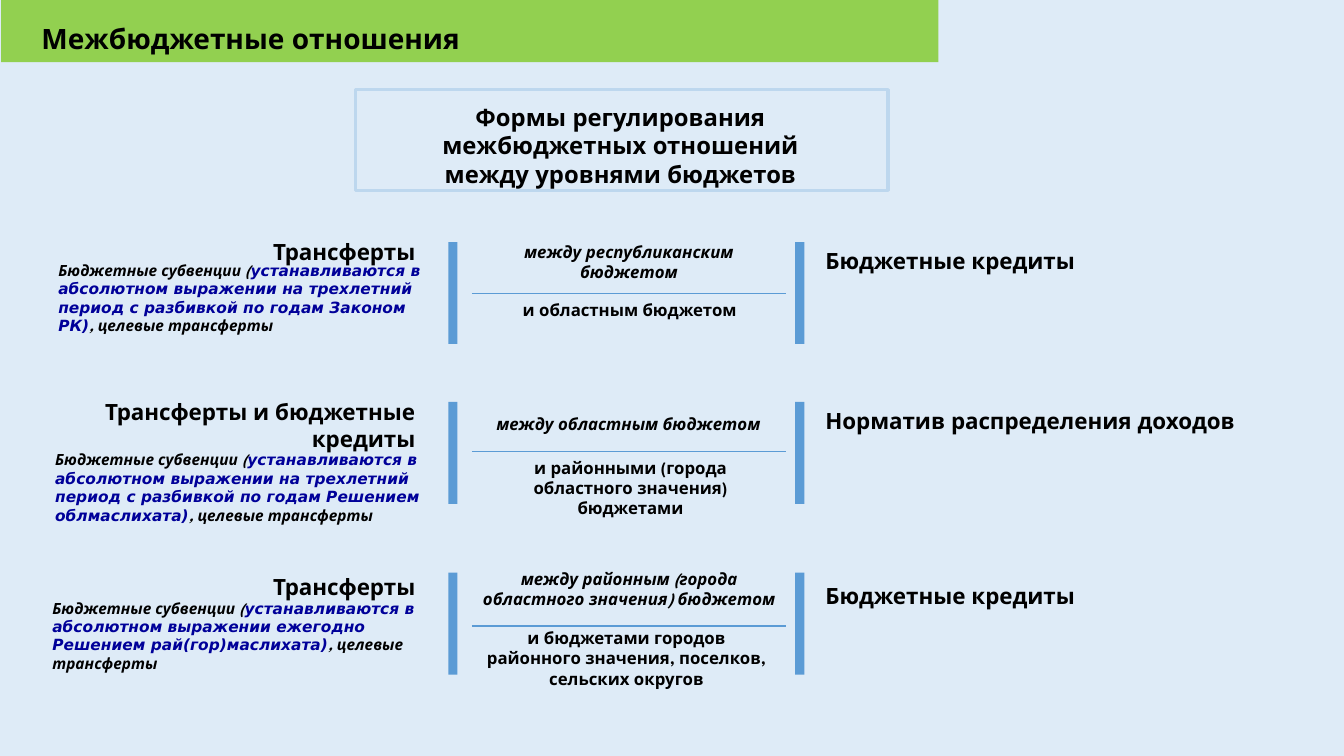
"""Build the slide on forms of regulating relations between budget levels."""
from lxml.etree import SubElement
from pptx import Presentation
from pptx.dml.color import RGBColor
from pptx.enum.shapes import MSO_CONNECTOR, MSO_SHAPE
from pptx.enum.text import MSO_ANCHOR, MSO_AUTO_SIZE, PP_ALIGN
from pptx.oxml.ns import qn
from pptx.util import Cm, Pt

COLORS = {
    "background": "DEEBF7",
    "banner": "92D050",
    "frame": "BDD7EE",
    "accent": "5B9BD5",
    "text": "000000",
    "emphasis": "000099",
}
RGB = {name: RGBColor.from_string(value) for name, value in COLORS.items()}
MAIN_FONT = "League Spartan"
EMPHASIS_FONT = "DejaVu Sans"

presentation = Presentation()
presentation.slide_width = Cm(33.87)
presentation.slide_height = Cm(19.05)
slide = presentation.slides.add_slide(presentation.slide_layouts[5])
slide.background.fill.solid()
slide.background.fill.fore_color.rgb = RGB["background"]


def add_rectangle(left, top, width, height, fill=None):
    """Add a rectangle without a line or shadow, filled if a colour is named."""
    shape = slide.shapes.add_shape(
        MSO_SHAPE.RECTANGLE, Cm(left), Cm(top), Cm(width), Cm(height))
    shape.shadow.inherit = False
    shape.line.fill.background()
    if fill:
        shape.fill.solid()
        shape.fill.fore_color.rgb = RGB[fill]
    else:
        shape.fill.background()
    return shape


def add_text(box, lines, size, align=PP_ALIGN.CENTER, italic=False):
    """Add a bold text box with one paragraph a line."""
    shape = slide.shapes.add_textbox(*[Cm(length) for length in box])
    frame = shape.text_frame
    frame.word_wrap = True
    frame.auto_size = MSO_AUTO_SIZE.SHAPE_TO_FIT_TEXT
    frame.text = "\n".join(lines)
    for paragraph in frame.paragraphs:
        paragraph.alignment = align
        paragraph.font.name = MAIN_FONT
        paragraph.font.size = Pt(size)
        paragraph.font.bold = True
        paragraph.font.italic = italic
        paragraph.font.color.rgb = RGB["text"]
    return shape


title = slide.shapes.title
title.left, title.top, title.width, title.height = Cm(0.79), Cm(0.41), Cm(23.19), Cm(1.12)
title.text_frame.text = "Межбюджетные отношения"
title.text_frame.auto_size = MSO_AUTO_SIZE.NONE
title.text_frame.vertical_anchor = MSO_ANCHOR.TOP
title_paragraph = title.text_frame.paragraphs[0]
title_paragraph.alignment = PP_ALIGN.LEFT
title_paragraph.font.name = MAIN_FONT
title_paragraph.font.size = Pt(20)
title_paragraph.font.bold = True
title_paragraph.font.color.rgb = RGB["text"]
banner = add_rectangle(0.03, 0, 23.62, 1.57, "banner")
title.element.addprevious(banner.element)

add_text((8.89, 2.46, 13.49, 2.44),
         ["Формы регулирования", "межбюджетных отношений", "между уровнями бюджетов"], 17)
heading_frame = add_rectangle(8.97, 2.26, 13.41, 2.54)
heading_frame.line.color.rgb = RGB["frame"]
heading_frame.line.width = Pt(2.25)

levels = [
    {
        "bar_top": 6.1, "divider": 7.39,
        "left": ((0.56, 5.87, 10.16, 0.94), "Трансферты"),
        "note": ((1.22, 6.45, 10.16, 2.13),
                 "устанавливаются в абсолютном выражении на трехлетний период "
                 "с разбивкой по годам Законом РК)"),
        "upper": ((12.55, 5.97, 6.6, 1.27), "между республиканским бюджетом"),
        "lower": ((12.57, 7.42, 6.6, 0.76), "и областным бюджетом"),
        "right": ((20.55, 6.1, 10.87, 0.94), "Бюджетные кредиты"),
    },
    {
        "bar_top": 10.13, "divider": 11.38,
        "left": ((0.56, 9.91, 10.16, 1.63), "Трансферты и бюджетные кредиты"),
        "note": ((1.14, 11.23, 10.16, 2.13),
                 "устанавливаются в абсолютном выражении на трехлетний период "
                 "с разбивкой по годам Решением облмаслихата)"),
        "upper": ((11.89, 10.31, 7.9, 0.76), "между областным бюджетом"),
        "lower": ((11.94, 11.4, 7.9, 1.27),
                  "и районными (города областного значения) бюджетами"),
        "right": ((20.55, 10.13, 12.14, 0.94), "Норматив распределения доходов"),
    },
    {
        "bar_top": 14.43, "divider": 15.77,
        "left": ((0.56, 14.33, 10.16, 0.94), "Трансферты"),
        "note": ((1.07, 14.96, 10.16, 2.13),
                 "устанавливаются в абсолютном выражении ежегодно "
                 "Решением рай(гор)маслихата)"),
        "upper": ((11.91, 14.2, 7.9, 1.27),
                  "между районным (города областного значения) бюджетом"),
        "lower": ((11.84, 15.7, 7.9, 1.8),
                  "и бюджетами городов районного значения, поселков, сельских округов"),
        "right": ((20.55, 14.55, 12.14, 0.94), "Бюджетные кредиты"),
    },
]

for level in levels:
    for bar_left in (11.3, 20.04):
        add_rectangle(bar_left, level["bar_top"], 0.23, 2.57, "accent")

    divider = slide.shapes.add_connector(
        MSO_CONNECTOR.STRAIGHT, Cm(11.89), Cm(level["divider"]), Cm(19.81), Cm(level["divider"]))
    divider.line.color.rgb = RGB["accent"]
    divider.line.width = Pt(1)
    SubElement(divider.element.spPr, qn("a:effectLst"))

    for part, size, align, italic in (
        ("left", 16, PP_ALIGN.RIGHT, False),
        ("right", 16, PP_ALIGN.LEFT, False),
        ("upper", 12, PP_ALIGN.CENTER, True),
        ("lower", 12, PP_ALIGN.CENTER, False),
    ):
        box, text = level[part]
        add_text(box, [text], size, align, italic)

    box, rule = level["note"]
    note = add_text(box, ["Бюджетные субвенции ("], 11, PP_ALIGN.LEFT, True)
    note_paragraph = note.text_frame.paragraphs[0]
    rule_run = note_paragraph.add_run()
    rule_run.text = rule
    rule_run.font.name = EMPHASIS_FONT
    rule_run.font.color.rgb = RGB["emphasis"]
    note_paragraph.add_run().text = ", целевые трансферты"

presentation.save("out.pptx")
